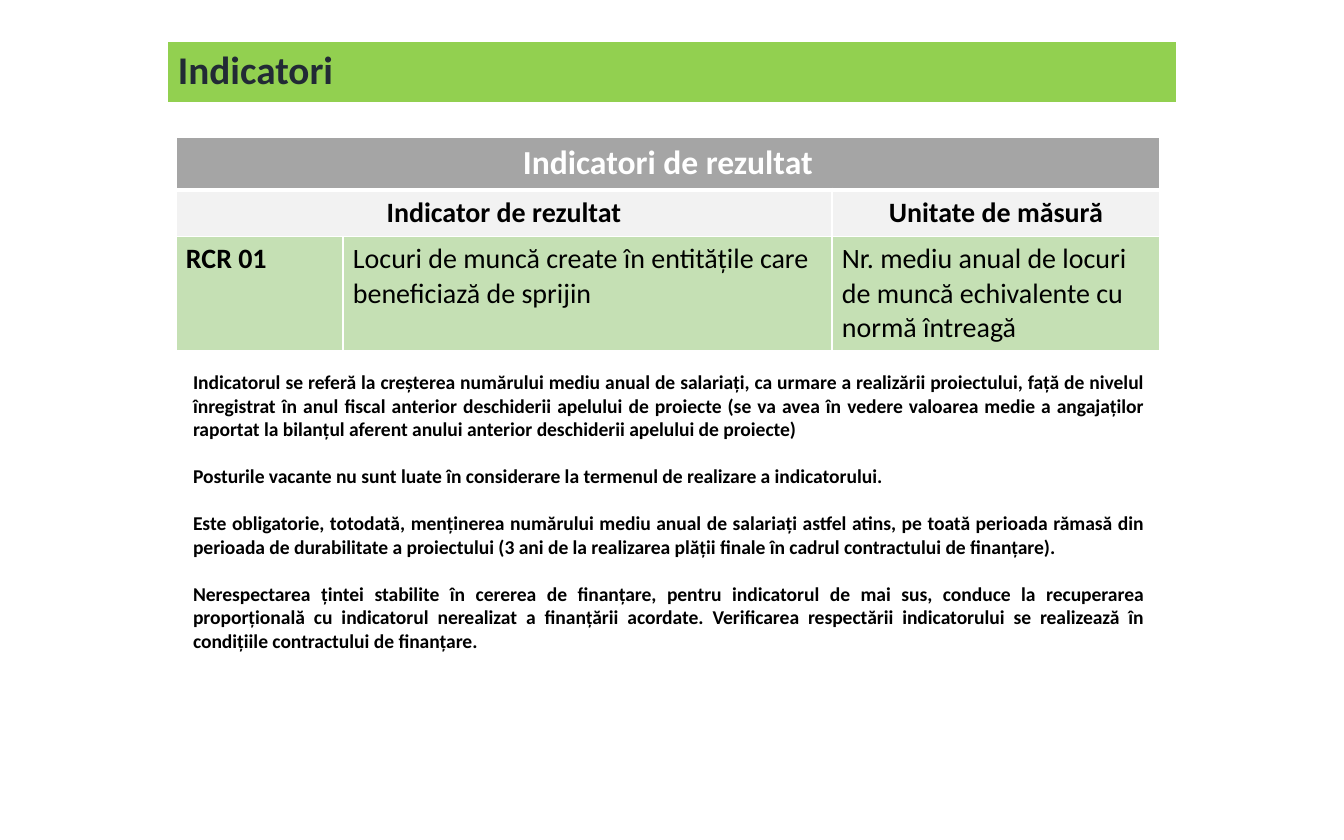
from pptx import Presentation
from pptx.dml.color import RGBColor
from pptx.enum.text import MSO_ANCHOR, MSO_AUTO_SIZE, PP_ALIGN
from pptx.oxml import parse_xml
from pptx.oxml.ns import nsdecls
from pptx.util import Emu, Pt

LEFT, CENTER, JUSTIFY = PP_ALIGN.LEFT, PP_ALIGN.CENTER, PP_ALIGN.JUSTIFY
TOP, MIDDLE = MSO_ANCHOR.TOP, MSO_ANCHOR.MIDDLE
NO_AUTOFIT = MSO_AUTO_SIZE.NONE
EMU_PER_PX = 914400 / 134.4

TITLE = "Indicatori"
TABLE_ROWS = [
    [("Indicatori de rezultat", 3, CENTER, 18, True, "FFFFFF", "A5A5A5")],
    [
        ("Indicator de rezultat", 2, CENTER, 15, True, "000000", "F2F2F2"),
        ("Unitate de măsură", 1, CENTER, 15, True, "000000", "F2F2F2"),
    ],
    [
        ("RCR 01", 1, LEFT, 15, True, "000000", "C5E0B4"),
        ("Locuri de muncă create în entitățile care beneficiază de sprijin",
         1, LEFT, 15, False, "000000", "C5E0B4"),
        ("Nr. mediu anual de locuri de muncă echivalente cu normă întreagă",
         1, LEFT, 15, False, "000000", "C5E0B4"),
    ],
]
NOTES = [
    "Indicatorul se referă la creșterea numărului mediu anual de salariați, ca urmare a "
    "realizării proiectului, față de nivelul înregistrat în anul fiscal anterior deschiderii "
    "apelului de proiecte (se va avea în vedere valoarea medie a angajaților raportat la "
    "bilanțul aferent anului anterior deschiderii apelului de proiecte)",
    "Posturile vacante nu sunt luate în considerare la termenul de realizare a indicatorului.",
    "Este obligatorie, totodată, menținerea numărului mediu anual de salariați astfel atins, "
    "pe toată perioada rămasă din perioada de durabilitate a proiectului (3 ani de la "
    "realizarea plății finale în cadrul contractului de finanțare).",
    "Nerespectarea țintei stabilite în cererea de finanțare, pentru indicatorul de mai sus, "
    "conduce la recuperarea proporțională cu indicatorul nerealizat a finanțării acordate. "
    "Verificarea respectării indicatorului se realizează în condițiile contractului de finanțare.",
]


def px(length):
    return Emu(round(length * EMU_PER_PX))


def color(value):
    return RGBColor.from_string(value)


def apply(target, values):
    for name, value in values.items():
        setattr(target, name, value)


class SlideBuilder:
    font_name = "Calibri"
    border_color = "FFFFFF"

    def __init__(self, presentation):
        self.slide = presentation.slides.add_slide(presentation.slide_layouts[1])

    def place(self, shape, box):
        apply(shape, dict(zip(("left", "top", "width", "height"), map(px, box))))

    def frame(self, target, horizontal, vertical, anchor):
        apply(target, {
            "margin_left": px(horizontal), "margin_right": px(horizontal),
            "margin_top": px(vertical), "margin_bottom": px(vertical),
            "vertical_anchor": anchor,
        })

    def add_text(self, paragraph, text, size, bold, text_color, **layout):
        run = paragraph.add_run()
        run.text = text
        apply(run.font, {"name": self.font_name, "size": Pt(size), "bold": bold})
        run.font.color.rgb = color(text_color)
        apply(paragraph, layout)

    def title(self, text, box, fill):
        shape = self.slide.shapes.title
        self.place(shape, box)
        shape.fill.solid()
        shape.fill.fore_color.rgb = color(fill)
        frame = shape.text_frame
        apply(frame, {"auto_size": NO_AUTOFIT, "word_wrap": True})
        self.frame(frame, 10, 5, MIDDLE)
        self.add_text(frame.paragraphs[0], text, 21, True, "222A35",
                      alignment=LEFT, line_spacing=0.9)

    def border(self, cell, side, points):
        cell._tc.get_or_add_tcPr().append(parse_xml(
            f'<a:ln{side} {nsdecls("a")} w="{Pt(points)}"><a:solidFill>'
            f'<a:srgbClr val="{self.border_color}"/></a:solidFill></a:ln{side}>'))

    def table(self, rows, box, widths, heights):
        graphic = self.slide.shapes.add_table(len(heights), len(widths), *map(px, box))
        table = graphic.table
        apply(table, {"first_row": False, "horz_banding": False})
        for column, width in zip(table.columns, widths):
            column.width = px(width)
        for row, height in zip(table.rows, heights):
            row.height = px(height)
        for row_index, entries in enumerate(rows):
            column_index = 0
            for text, span, alignment, size, bold, text_color, fill in entries:
                last = column_index + span - 1
                cell = table.cell(row_index, column_index)
                if span > 1:
                    cell.merge(table.cell(row_index, last))
                for position in range(column_index, last + 1):
                    part = table.cell(row_index, position)
                    for side in "LRTB":
                        heavy = (row_index, side) in ((0, "B"), (1, "T"))
                        self.border(part, side, 3 if heavy else 0.96)
                    part.fill.solid()
                    part.fill.fore_color.rgb = color(fill)
                self.frame(cell, 10, 6, TOP)
                self.add_text(cell.text_frame.paragraphs[0], text, size, bold, text_color,
                              alignment=alignment)
                column_index = last + 1

    def body(self, texts, box):
        shape = self.slide.placeholders[1]
        self.place(shape, box)
        frame = shape.text_frame
        apply(frame, {"auto_size": NO_AUTOFIT, "word_wrap": True})
        self.frame(frame, 13, 7, TOP)
        for index, text in enumerate(texts):
            paragraph = frame.add_paragraph() if index else frame.paragraphs[0]
            self.add_text(paragraph, text, 10.5, True, "000000", alignment=JUSTIFY,
                          line_spacing=1.0, space_before=Pt(0), space_after=Pt(12.6))
            properties = paragraph._p.get_or_add_pPr()
            properties.set("marL", "0")
            properties.set("indent", "0")
            properties.append(parse_xml(f'<a:buNone {nsdecls("a")}/>'))


def main():
    presentation = Presentation()
    apply(presentation, {"slide_width": px(1344), "slide_height": px(840)})
    builder = SlideBuilder(presentation)
    builder.title(TITLE, (168, 42, 1008, 60), "92D050")
    builder.table(TABLE_ROWS, (176, 137, 984, 204), (167, 489, 328), (50, 43, 111))
    builder.body(NOTES, (180, 363, 978, 319))
    presentation.save("out.pptx")


if __name__ == "__main__":
    main()
